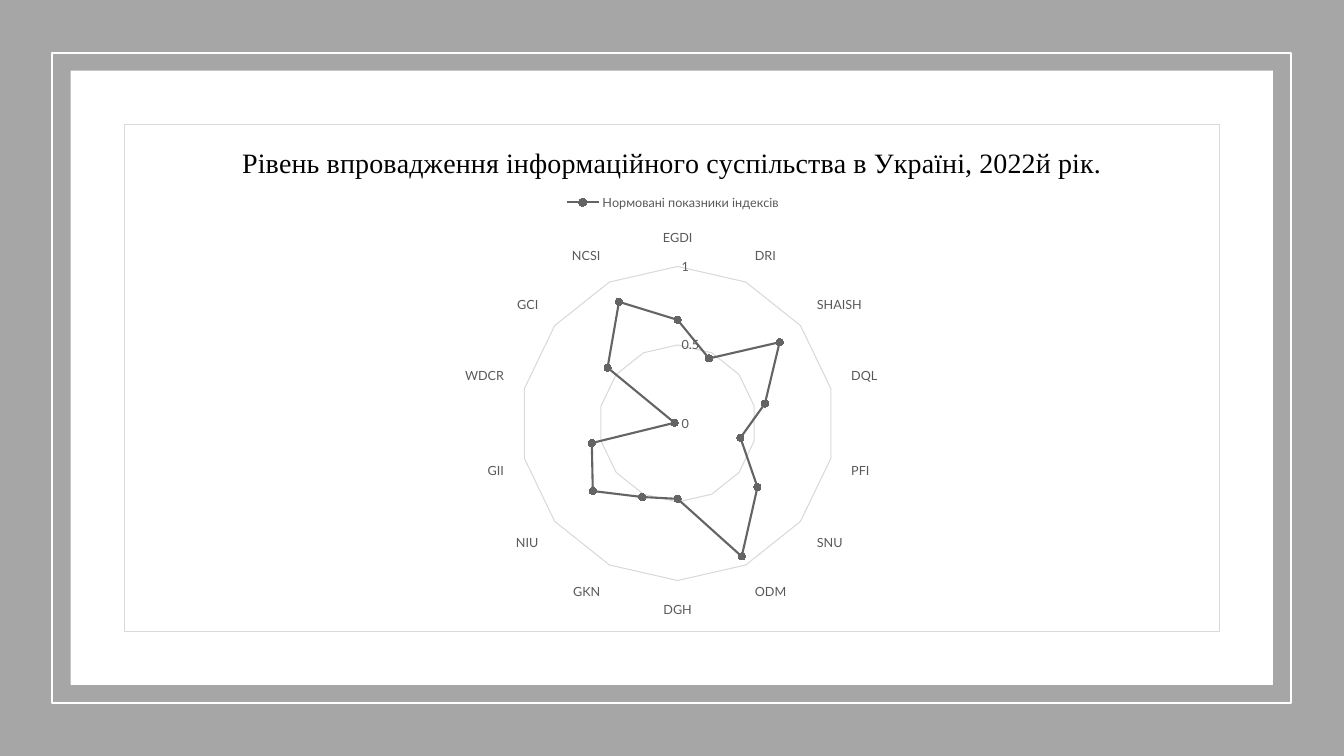
from lxml import etree
from pptx import Presentation
from pptx.chart.data import CategoryChartData
from pptx.dml.color import RGBColor
from pptx.enum.chart import XL_CHART_TYPE, XL_LEGEND_POSITION, XL_MARKER_STYLE, XL_TICK_MARK
from pptx.enum.shapes import MSO_SHAPE
from pptx.oxml import parse_xml
from pptx.oxml.ns import nsdecls, qn
from pptx.util import Cm, Pt

RECTANGLE = MSO_SHAPE.RECTANGLE
RADAR = XL_CHART_TYPE.RADAR_MARKERS
LEGEND_TOP = XL_LEGEND_POSITION.TOP
CIRCLE = XL_MARKER_STYLE.CIRCLE
NO_TICK = XL_TICK_MARK.NONE

TITLE = "Рівень впровадження інформаційного суспільства в Україні, 2022й рік."
SERIES = "Нормовані показники індексів"
INDICES = {
    "EGDI": 0.66, "DRI": 0.46, "SHAISH": 0.83, "DQL": 0.57, "PFI": 0.41,
    "SNU": 0.65, "ODM": 0.94, "DGH": 0.48, "GKN": 0.52, "NIU": 0.69,
    "GII": 0.56, "WDCR": 0.02, "GCI": 0.57, "NCSI": 0.86,
}


def color(value):
    return RGBColor.from_string(value)


class SlideBuilder:
    """Draws frames and radar charts on one slide in a shared style."""

    white, gray, grid, ink, data = "FFFFFF", "A6A6A6", "D9D9D9", "595959", "646464"
    font, title_font = "Lato", "Times New Roman"

    def __init__(self, page):
        self.page = page

    def frame(self, left, top, width, height, fill=None, line=None):
        box = self.page.shapes.add_shape(
            RECTANGLE, Cm(left), Cm(top), Cm(width), Cm(height))
        box.shadow.inherit = False
        if fill:
            box.fill.solid()
            box.fill.fore_color.rgb = color(fill)
        else:
            box.fill.background()
        if line:
            self.stroke(box.line, line, 1.5)
        else:
            box.line.fill.background()

    def stroke(self, line, value, width):
        line.color.rgb = color(value)
        line.width = Pt(width)

    def text(self, font, size, value, name):
        font.size, font.name, font.bold = Pt(size), name, False
        font.color.rgb = color(value)

    def layout(self, parent, inner=False, **fractions):
        old = parent.find(qn("c:layout"))
        layout = parse_xml(f"<c:layout {nsdecls('c')}/>")
        manual = etree.SubElement(layout, qn("c:manualLayout"))
        settings = {"xMode": "edge", "yMode": "edge", **fractions}
        if inner:
            settings = {"layoutTarget": "inner", **settings}
        for tag, value in settings.items():
            etree.SubElement(manual, qn(f"c:{tag}")).set("val", str(value))
        if old is not None:
            parent.replace(old, layout)
        elif inner:
            parent.insert(0, layout)
        else:
            parent.find(qn("c:legendPos")).addnext(layout)

    def chart_area(self, chart):
        chart._chartSpace.find(qn("c:chart")).addnext(parse_xml(
            f"<c:spPr {nsdecls('c', 'a')}>"
            f'<a:solidFill><a:srgbClr val="{self.white}"/></a:solidFill>'
            f'<a:ln w="{Pt(0.75)}"><a:solidFill><a:srgbClr val="{self.grid}"/>'
            "</a:solidFill></a:ln></c:spPr>"))

    def radar(self, left, top, width, height, title, name, values):
        table = CategoryChartData(number_format="General")
        table.categories = list(values)
        table.add_series(name, list(values.values()))
        chart = self.page.shapes.add_chart(
            RADAR, Cm(left), Cm(top), Cm(width), Cm(height), table).chart
        self.text(chart.font, 10, "000000", self.font)
        self.chart_area(chart)

        chart.has_title = True
        heading = chart.chart_title.text_frame
        heading.text = title
        self.text(heading.paragraphs[0].font, 20, "000000", self.title_font)

        chart.has_legend = True
        chart.legend.position = LEGEND_TOP
        chart.legend.include_in_layout = False
        self.text(chart.legend.font, 9, self.ink, self.font)
        self.layout(chart.legend._element, x=0.4, y=0.13)

        for axis in (chart.category_axis, chart.value_axis):
            axis.major_tick_mark = axis.minor_tick_mark = NO_TICK
            axis.tick_labels.number_format = "General"
            axis.tick_labels.number_format_is_linked = False
            self.text(axis.tick_labels.font, 9, self.ink, self.font)
        chart.category_axis.has_major_gridlines = False
        self.stroke(chart.category_axis.format.line, self.grid, 0.75)
        scale = chart.value_axis
        scale.minimum_scale, scale.maximum_scale, scale.major_unit = 0, 1, 0.5
        scale.format.line.fill.background()
        scale.has_major_gridlines = True
        self.stroke(scale.major_gridlines.format.line, self.grid, 0.75)

        plot = chart.plots[0]
        plot.vary_by_categories = False
        self.layout(plot._element.getparent(), inner=True,
                    x=0.36, y=0.28, w=0.29, h=0.62)
        series = plot.series[0]
        series.smooth = False
        self.stroke(series.format.line, self.data, 1.5)
        series.marker.style, series.marker.size = CIRCLE, 5
        series.marker.format.fill.solid()
        series.marker.format.fill.fore_color.rgb = color(self.data)
        self.stroke(series.marker.format.line, self.data, 0.75)


def main():
    deck = Presentation()
    deck.slide_width, deck.slide_height = Cm(33.87), Cm(19.05)
    slide = SlideBuilder(deck.slides.add_slide(deck.slide_layouts[6]))
    slide.frame(0, 0, 33.87, 19.05, fill=slide.gray)
    slide.frame(1.32, 1.34, 31.22, 16.38, line=slide.white)
    slide.frame(1.78, 1.78, 30.3, 15.48, fill=slide.white)
    slide.radar(3.13, 3.13, 27.62, 12.79, TITLE, SERIES, INDICES)
    deck.save("out.pptx")


if __name__ == "__main__":
    main()
